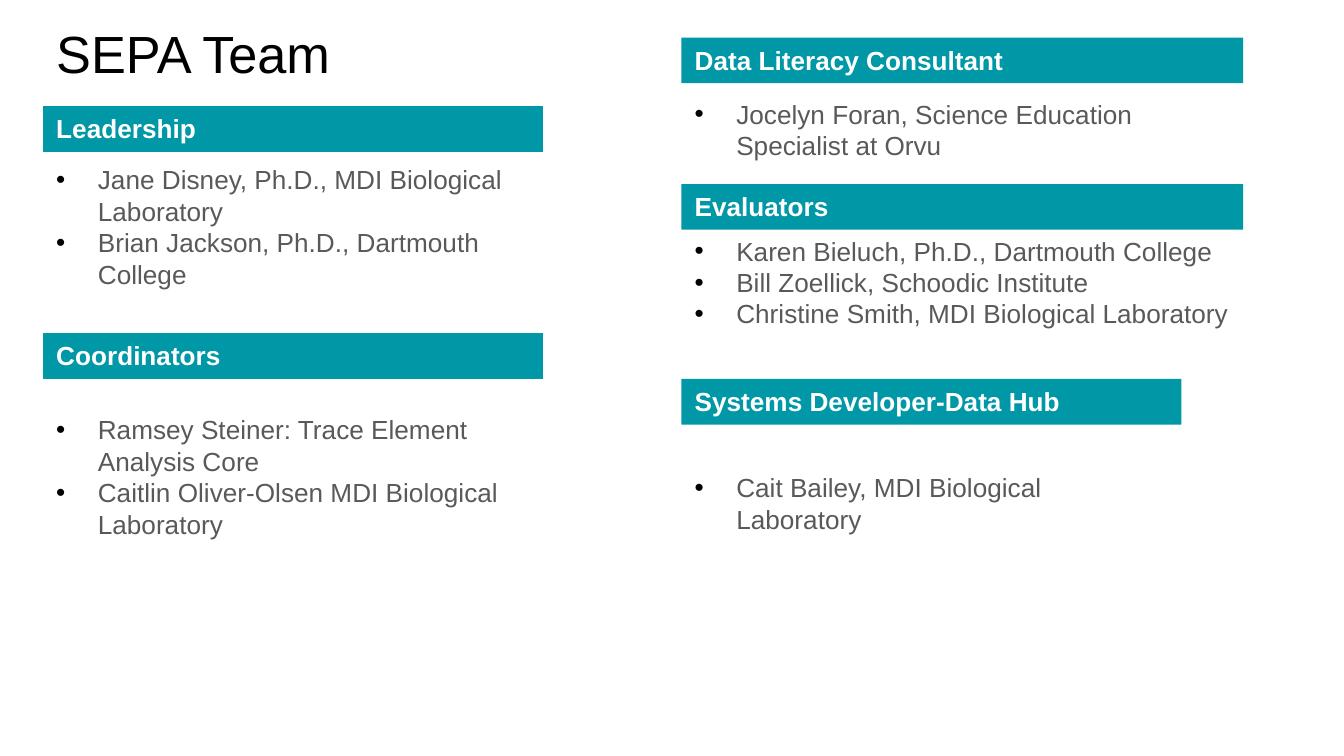
from lxml.etree import SubElement
from pptx import Presentation
from pptx.dml.color import RGBColor
from pptx.enum.shapes import MSO_SHAPE
from pptx.enum.text import MSO_ANCHOR, PP_ALIGN
from pptx.oxml.ns import qn
from pptx.util import Inches, Pt

TEAL = RGBColor(0x00, 0x97, 0xA7)
WHITE = RGBColor(0xFF, 0xFF, 0xFF)
BLACK = RGBColor(0x00, 0x00, 0x00)
GRAY = RGBColor(0x59, 0x59, 0x59)
FONT = "Arial"
LEFT, RIGHT = 0.32, 5.07
BAR_HEIGHT = 0.34
HANG = Inches(0.31)

GROUPS = [
    ("Leadership", LEFT, 0.79, 3.72, 0.38, 3.72, 1.04,
     ["Jane Disney, Ph.D., MDI Biological Laboratory",
      "Brian Jackson, Ph.D., Dartmouth College"]),
    ("Coordinators", LEFT, 2.48, 3.72, 0.55, 3.96, 1.28,
     ["Ramsey Steiner: Trace Element Analysis Core",
      "Caitlin Oliver-Olsen MDI Biological Laboratory"]),
    ("Data Literacy Consultant", RIGHT, 0.28, 4.18, 0.4, 3.92, 0.57,
     ["Jocelyn Foran, Science Education Specialist at Orvu"]),
    ("Evaluators", RIGHT, 1.37, 4.18, 0.33, 4.18, 0.81,
     ["Karen Bieluch, Ph.D., Dartmouth College",
      "Bill Zoellick, Schoodic Institute",
      "Christine Smith, MDI Biological Laboratory"]),
    ("Systems Developer-Data Hub", RIGHT, 2.82, 3.72, 0.64, 3.72, 0.57,
     ["Cait Bailey, MDI Biological Laboratory"]),
]


def add_text(paragraph, text, size, color, bold=False):
    """Add one styled run to a paragraph."""
    run = paragraph.add_run()
    run.text = text
    run.font.name = FONT
    run.font.size = Pt(size)
    run.font.bold = bold
    run.font.color.rgb = color


def add_bullet(paragraph):
    """Give a paragraph a black bullet with a hanging indent."""
    properties = paragraph._p.get_or_add_pPr()
    properties.set("marL", str(HANG))
    properties.set("indent", str(-HANG))
    color = SubElement(properties, qn("a:buClr"))
    SubElement(color, qn("a:srgbClr"), val=str(BLACK))
    SubElement(properties, qn("a:buFont"), typeface=FONT)
    SubElement(properties, qn("a:buChar"), char="•")


def add_title(slide, left, top, width, height):
    """Place the slide title in the given box."""
    title = slide.shapes.add_textbox(
        Inches(left), Inches(top), Inches(width), Inches(height))
    frame = title.text_frame
    frame.word_wrap = True
    frame.margin_top = frame.margin_bottom = Inches(0.1)
    add_text(frame.paragraphs[0], "SEPA Team", 28, BLACK)


def add_heading(slide, heading, left, top, width):
    """Place a teal heading bar."""
    bar = slide.shapes.add_shape(
        MSO_SHAPE.RECTANGLE,
        Inches(left), Inches(top), Inches(width), Inches(BAR_HEIGHT))
    bar.shadow.inherit = False
    bar.fill.solid()
    bar.fill.fore_color.rgb = TEAL
    bar.line.fill.background()
    frame = bar.text_frame
    frame.word_wrap = True
    frame.vertical_anchor = MSO_ANCHOR.TOP
    frame.paragraphs[0].alignment = PP_ALIGN.LEFT
    add_text(frame.paragraphs[0], heading, 14, WHITE, bold=True)


def add_members(slide, members, left, top, width, height):
    """Place a bulleted list of members in the given box."""
    roster = slide.shapes.add_textbox(
        Inches(left), Inches(top), Inches(width), Inches(height))
    frame = roster.text_frame
    frame.word_wrap = True
    for index, member in enumerate(members):
        paragraph = frame.add_paragraph() if index else frame.paragraphs[0]
        add_bullet(paragraph)
        add_text(paragraph, member, 14, GRAY)


def add_group(slide, heading, left, top, bar_width, offset, width, height, members):
    """Place a heading bar with its member list below."""
    add_heading(slide, heading, left, top, bar_width)
    add_members(slide, members, left, top + offset, width, height)


def main():
    """Build the team slide and save it."""
    deck = Presentation()
    deck.slide_width = Inches(10)
    deck.slide_height = Inches(10 * 9 / 16)
    slide = deck.slides.add_slide(deck.slide_layouts[6])
    add_title(slide, LEFT, 0.06, 3.72, 0.63)
    for group in GROUPS:
        add_group(slide, *group)
    deck.save("out.pptx")


if __name__ == "__main__":
    main()
